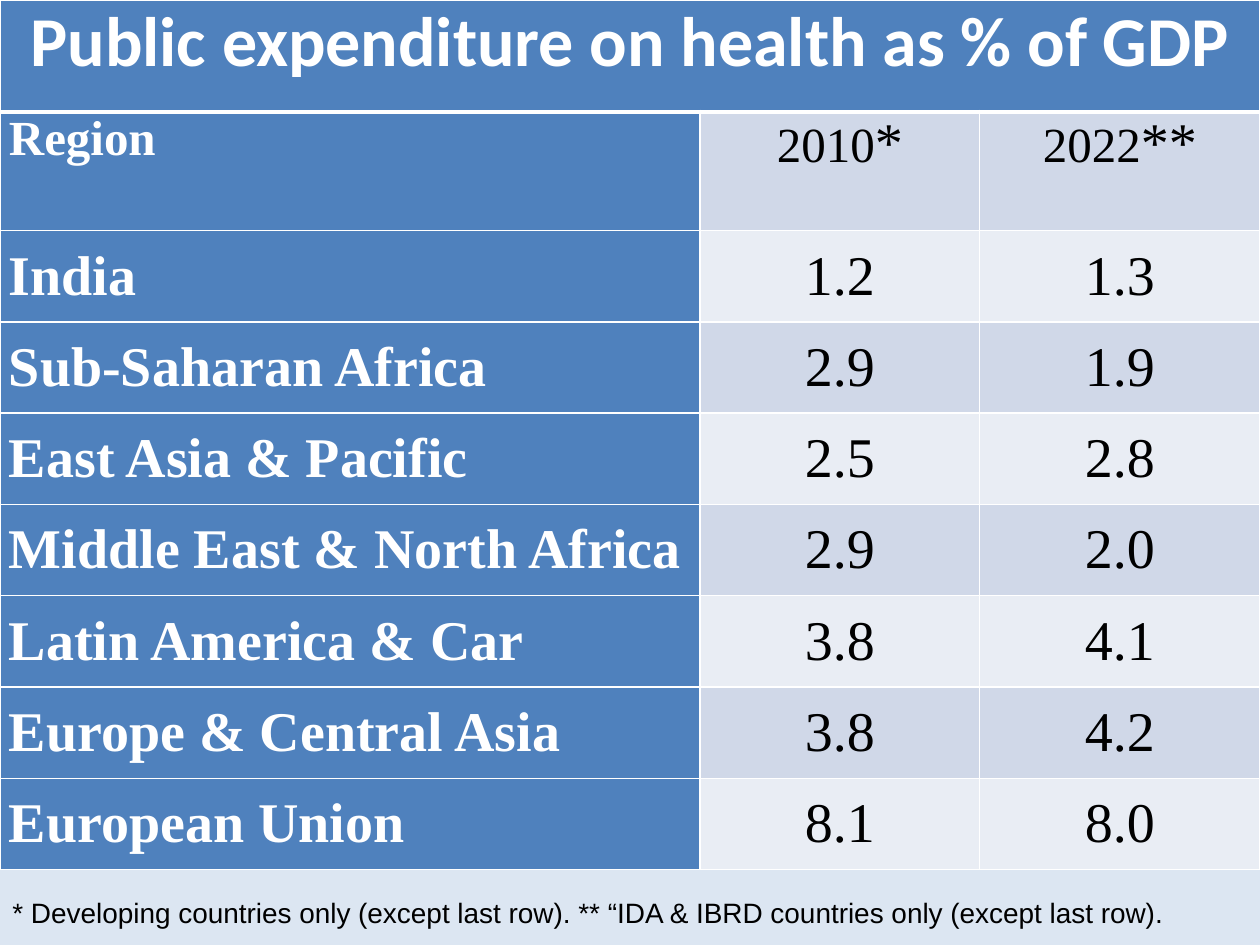
"""Build a slide with a table of public health expenditure by region."""
from lxml import etree
from pptx import Presentation
from pptx.dml.color import RGBColor
from pptx.enum.text import MSO_ANCHOR, PP_ALIGN
from pptx.oxml.ns import qn
from pptx.util import Cm, Pt

LEFT, CENTER = PP_ALIGN.LEFT, PP_ALIGN.CENTER
TOP, MIDDLE = MSO_ANCHOR.TOP, MSO_ANCHOR.MIDDLE
WHITE = RGBColor(0xFF, 0xFF, 0xFF)
BLACK = RGBColor(0x00, 0x00, 0x00)
BLUE = RGBColor(0x4F, 0x81, 0xBD)
BAND_DARK = RGBColor(0xD0, 0xD8, 0xE8)
BAND_LIGHT = RGBColor(0xE9, 0xED, 0xF4)
PALE_BLUE = RGBColor(0xDC, 0xE6, 0xF2)
SERIF = "Times New Roman"

TITLE = "Public expenditure on health as % of GDP"
FOOTNOTE = "* Developing countries only (except last row). ** “IDA & IBRD countries only (except last row)."
YEARS = [("2010", "*"), ("2022", "**")]
EXPENDITURE = [
    ("India", "1.2", "1.3"),
    ("Sub-Saharan Africa", "2.9", "1.9"),
    ("East Asia & Pacific", "2.5", "2.8"),
    ("Middle East & North Africa", "2.9", "2.0"),
    ("Latin America & Car", "3.8", "4.1"),
    ("Europe & Central Asia", "3.8", "4.2"),
    ("European Union", "8.1", "8.0"),
]
COLUMN_WIDTHS = [Cm(14.11), Cm(5.64), Cm(5.65)]
ROW_HEIGHTS = [Cm(2.26), Cm(2.39)] + [Cm(1.84)] * len(EXPENDITURE)


def add_run(paragraph, text, size, font_name, color, bold=False):
    run = paragraph.add_run()
    run.text = text
    run.font.size = Pt(size)
    run.font.name = font_name
    run.font.color.rgb = color
    run.font.bold = bold


def add_border(cell, side, points):
    line = etree.SubElement(cell._tc.get_or_add_tcPr(), qn(f"a:ln{side}"), w=str(Pt(points)))
    fill = etree.SubElement(line, qn("a:solidFill"))
    etree.SubElement(fill, qn("a:srgbClr"), val=str(WHITE))


prs = Presentation()
prs.slide_width, prs.slide_height = Cm(25.4), Cm(19.05)
slide = prs.slides.add_slide(prs.slide_layouts[6])
slide.background.fill.solid()
slide.background.fill.fore_color.rgb = PALE_BLUE

table = slide.shapes.add_table(
    len(ROW_HEIGHTS), len(COLUMN_WIDTHS), 0, 0, sum(COLUMN_WIDTHS), sum(ROW_HEIGHTS)
).table
table.first_row = False
table.horz_banding = False
for column, width in zip(table.columns, COLUMN_WIDTHS):
    column.width = width
for row, height in zip(table.rows, ROW_HEIGHTS):
    row.height = height
table.cell(0, 0).merge(table.cell(0, 2))

title_row = [[(TITLE, 40)], [], []]
heading_row = [[("Region", 28)]] + [[(year, 28), (mark, 32)] for year, mark in YEARS]
region_rows = [[[(text, 32)] for text in record] for record in EXPENDITURE]

for r, contents in enumerate([title_row, heading_row] + region_rows):
    for c, runs in enumerate(contents):
        cell = table.cell(r, c)
        is_label = r == 0 or c == 0
        for side in "LRTB":
            under_title = (r, side) in [(0, "B"), (1, "T")]
            add_border(cell, side, 3 if under_title else 1)
        cell.fill.solid()
        band = BAND_DARK if r % 2 else BAND_LIGHT
        cell.fill.fore_color.rgb = BLUE if is_label else band
        cell.margin_left = cell.margin_right = Cm(0.18)
        cell.margin_top = cell.margin_bottom = 0
        cell.vertical_anchor = TOP if r < 2 else MIDDLE
        paragraph = cell.text_frame.paragraphs[0]
        paragraph.alignment = LEFT if r and c == 0 else CENTER
        paragraph.space_after = Pt(6)
        for text, size in runs:
            add_run(paragraph, text, size, SERIF if r else "Calibri",
                    WHITE if is_label else BLACK, is_label)

footnote = slide.shapes.add_textbox(0, Cm(17.93), Cm(25.4), Cm(0.94)).text_frame
footnote.word_wrap = True
add_run(footnote.paragraphs[0], FOOTNOTE, 16, "Arial", BLACK)

prs.save("out.pptx")
